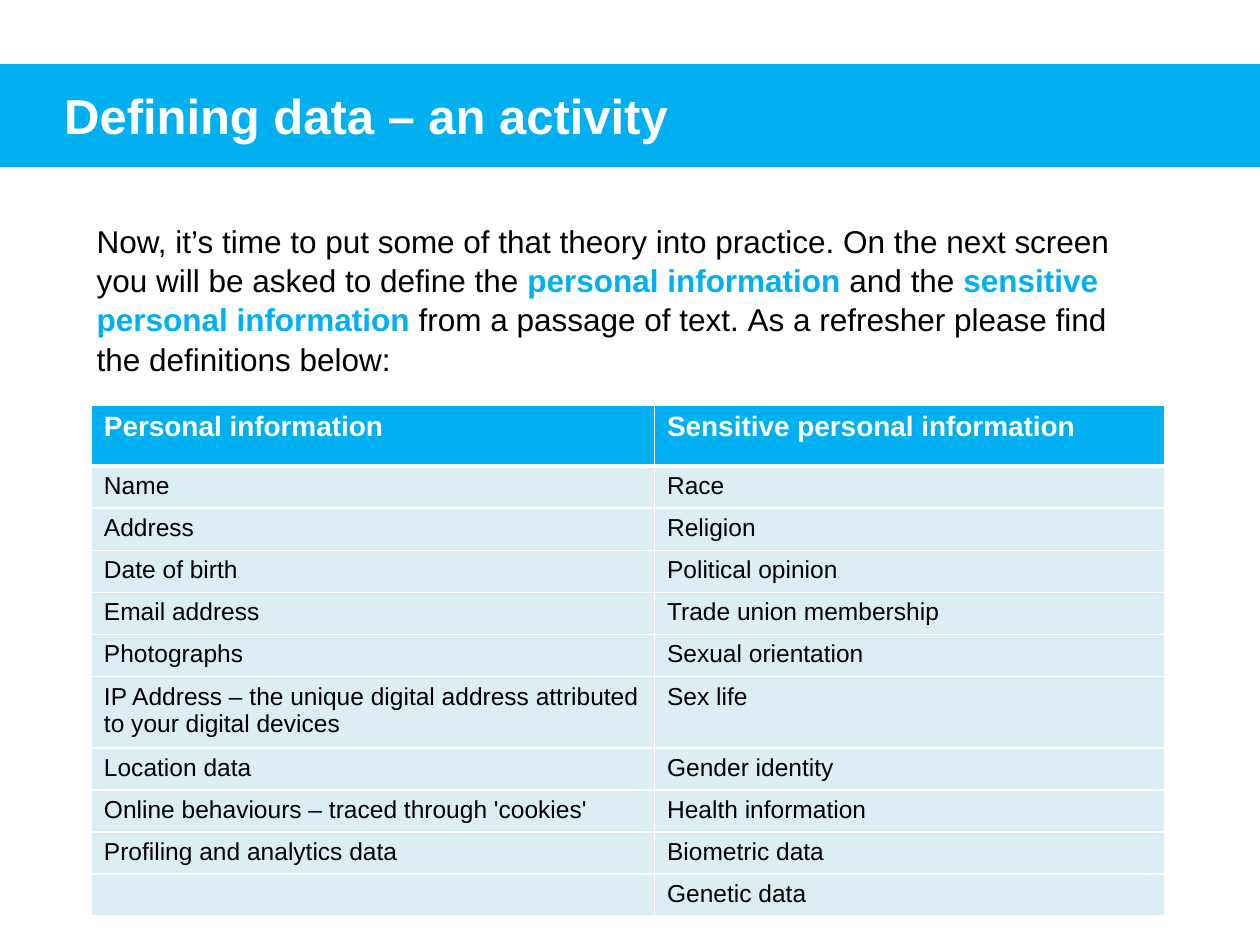
import pptx
import pptx.util
import pptx.dml.color
import pptx.enum.text
import pptx.oxml
import pptx.oxml.ns

Pt = pptx.util.Pt
FONT = "Arial"
COLORS = {"accent": "00B0F0", "white": "FFFFFF", "text": "000000", "row": "DBEEF4"}

HEADING = "Defining data – an activity"
INTRO = [
    ("Now, it’s time to put some of that theory into practice.\u00a0On the next screen you will be asked to define the ", False),
    ("personal information", True),
    (" and the ", False),
    ("sensitive personal information", True),
    (" from a passage of text.\u00a0As a refresher please find the definitions below:", False),
]
DEFINITIONS = [
    ("Personal information", "Sensitive personal information"),
    ("Name", "Race"),
    ("Address", "Religion"),
    ("Date of birth", "Political opinion"),
    ("Email address", "Trade union membership"),
    ("Photographs", "Sexual orientation"),
    ("IP Address – the unique digital address attributed to your digital devices", "Sex life"),
    ("Location data", "Gender identity"),
    ("Online behaviours – traced through 'cookies'", "Health information"),
    ("Profiling and analytics data", "Biometric data"),
    ("", "Genetic data"),
]
COLUMN_WIDTHS = (321.8, 291.6)
HEADER_HEIGHT, ROW_HEIGHT, TWO_LINE_HEIGHT = 35, 24, 40.8
TWO_LINE_ROW = 6


def rgb(name):
    return pptx.dml.color.RGBColor.from_string(COLORS[name])


def add_run(paragraph, text, size, color, bold):
    run = paragraph.add_run()
    run.text = text
    run.font.name = FONT
    run.font.size = Pt(size)
    run.font.bold = bold
    run.font.color.rgb = rgb(color)


def set_borders(cell, widths):
    properties = cell._tc.get_or_add_tcPr()
    for position, (side, width) in enumerate(widths.items()):
        border = pptx.oxml.parse_xml(
            f'<a:ln{side} {pptx.oxml.ns.nsdecls("a")} w="{Pt(width)}"><a:solidFill>'
            f'<a:srgbClr val="{COLORS["white"]}"/></a:solidFill></a:ln{side}>')
        properties.insert(position, border)


def add_heading(slide):
    banner = slide.shapes.title
    banner.left, banner.top, banner.width, banner.height = Pt(-42.5), Pt(37.4), Pt(810.7), Pt(56.9)
    banner.fill.solid()
    banner.fill.fore_color.rgb = rgb("accent")
    banner.line.color.rgb = rgb("accent")
    banner.line.width = Pt(2)
    frame = banner.text_frame
    frame.margin_left = Pt(79.2)
    frame.vertical_anchor = pptx.enum.text.MSO_ANCHOR.MIDDLE
    heading = frame.paragraphs[0]
    heading.alignment = pptx.enum.text.PP_ALIGN.LEFT
    add_run(heading, HEADING, 28, "white", True)


def add_intro(slide):
    frame = slide.shapes.add_textbox(Pt(48.2), Pt(122.4), Pt(612), Pt(138.2)).text_frame
    frame.word_wrap = True
    intro = frame.paragraphs[0]
    intro.line_spacing = 1.04
    for text, is_term in INTRO:
        add_run(intro, text, 18, "accent" if is_term else "text", is_term)


def add_definitions(slide):
    heights = [HEADER_HEIGHT] + [ROW_HEIGHT] * (len(DEFINITIONS) - 1)
    heights[TWO_LINE_ROW] = TWO_LINE_HEIGHT
    definitions = slide.shapes.add_table(
        len(DEFINITIONS), len(COLUMN_WIDTHS), Pt(52.2), Pt(231.4),
        Pt(sum(COLUMN_WIDTHS)), Pt(sum(heights))).table
    for column, width in zip(definitions.columns, COLUMN_WIDTHS):
        column.width = Pt(width)
    for row_index, (entries, height) in enumerate(zip(DEFINITIONS, heights)):
        definitions.rows[row_index].height = Pt(height)
        is_header = row_index == 0
        size, color = (16, "white") if is_header else (14, "text")
        for column_index, entry in enumerate(entries):
            cell = definitions.cell(row_index, column_index)
            cell.fill.solid()
            cell.fill.fore_color.rgb = rgb("accent" if is_header else "row")
            set_borders(cell, {"L": 1, "R": 1, "T": 3 if row_index == 1 else 1, "B": 3 if is_header else 1})
            paragraph = cell.text_frame.paragraphs[0]
            if entry:
                add_run(paragraph, entry, size, color, is_header)
            else:
                paragraph._p.append(pptx.oxml.parse_xml(
                    f'<a:endParaRPr {pptx.oxml.ns.nsdecls("a")} sz="{size * 100}"/>'))


def main():
    deck = pptx.Presentation()
    deck.slide_width, deck.slide_height = Pt(720), Pt(540)
    slide = deck.slides.add_slide(deck.slide_layouts[5])
    add_heading(slide)
    add_intro(slide)
    add_definitions(slide)
    deck.save("out.pptx")


if __name__ == "__main__":
    main()
